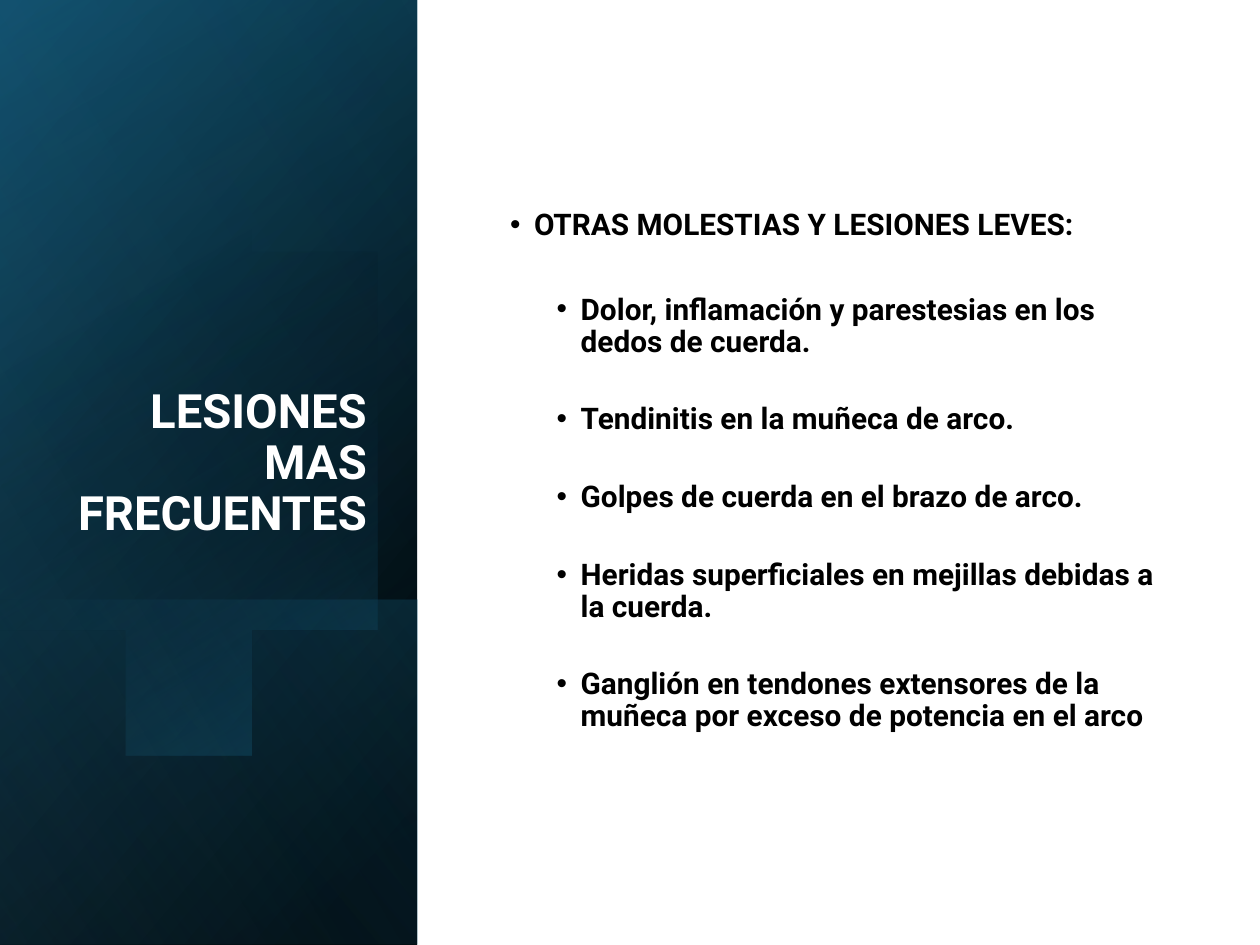
from typing import NamedTuple

from lxml.etree import SubElement
from pptx import Presentation
from pptx.dml.color import RGBColor
from pptx.enum.shapes import MSO_SHAPE
from pptx.enum.text import MSO_ANCHOR, PP_ALIGN
from pptx.oxml.ns import qn
from pptx.util import Inches, Pt

BLACK = RGBColor(0x00, 0x00, 0x00)
WHITE = RGBColor(0xFF, 0xFF, 0xFF)
NAVY = RGBColor(0x10, 0x48, 0x62)
TEAL = RGBColor(0x15, 0x60, 0x82)
SKY = RGBColor(0x46, 0xB1, 0xE1)

PANEL_W, SLIDE_H = 3.31, 7.5
BAND_H = 2.74


class Stop(NamedTuple):
    pos: int
    color: RGBColor
    opacity: int = 100


class Layer(NamedTuple):
    top: float
    angle: int
    stops: tuple[Stop, Stop]


class Item(NamedTuple):
    text: str
    indent: float
    before: float


BACK_LAYERS = [
    Layer(0, 220, (Stop(8, BLACK), Stop(100, NAVY))),
    Layer(0, 240, (Stop(0, BLACK, 0), Stop(99, TEAL, 46))),
    Layer(SLIDE_H - BAND_H, 140, (Stop(2, TEAL, 29), Stop(100, BLACK, 30))),
]
GLOW = Layer(0, 150, (Stop(0, BLACK, 0), Stop(99, SKY, 11)))
DISC_ANGLE = 60
DISC_STOPS = (Stop(29, BLACK, 0), Stop(100, TEAL, 43))

# Cubic curves around the disc, clockwise from the left slide edge
DISC_CURVES = [
    ((0, 1.42), (0.13, 1.31), (0.28, 1.23), (0.45, 1.18)),
    ((0.45, 1.18), (0.62, 1.13), (0.79, 1.12), (0.96, 1.14)),
    ((0.96, 1.14), (1.71, 1.22), (2.44, 1.92), (2.73, 2.9)),
    ((2.73, 2.9), (3.07, 4.12), (2.62, 5.31), (1.71, 5.57)),
    ((1.71, 5.57), (1.14, 5.74), (0.53, 5.5), (0.07, 5)),
]
DISC_END = (0, 4.92)

ITEMS = [Item("OTRAS MOLESTIAS Y LESIONES LEVES:", 0.19, 0)] + [
    Item(text, 0.56, 29.7 if i == 0 else 26)
    for i, text in enumerate([
        "Dolor, inflamación y parestesias en los dedos de cuerda.",
        "Tendinitis en la muñeca de arco.",
        "Golpes de cuerda en el brazo de arco.",
        "Heridas superficiales en mejillas debidas a la cuerda.",
        "Ganglión en tendones extensores de la muñeca por exceso de potencia en el arco",
    ])
]


def fill_gradient(sp, angle: int, stops: tuple[Stop, Stop]) -> None:
    """Fill with a linear gradient; the angle runs clockwise from rightwards."""
    sp.shadow.inherit = False
    sp.line.fill.background()
    sp.fill.gradient()
    grad = sp.fill._xPr.find(qn("a:gradFill"))
    for child in list(grad):
        grad.remove(child)
    gs_list = SubElement(grad, qn("a:gsLst"))
    for stop in stops:
        gs = SubElement(gs_list, qn("a:gs"), pos=str(stop.pos * 1000))
        color = SubElement(gs, qn("a:srgbClr"), val=str(stop.color))
        if stop.opacity < 100:
            SubElement(color, qn("a:alpha"), val=str(stop.opacity * 1000))
    SubElement(grad, qn("a:lin"), ang=str(angle * 60000), scaled="0")


def add_layer(s, layer: Layer) -> None:
    sp = s.shapes.add_shape(
        MSO_SHAPE.RECTANGLE, 0, Inches(layer.top),
        Inches(PANEL_W), Inches(SLIDE_H - layer.top))
    fill_gradient(sp, layer.angle, layer.stops)


def curve_points(curve, steps: int = 24) -> list[tuple[float, float]]:
    """Sample a cubic Bezier curve, leaving out its start."""
    points = []
    for i in range(1, steps + 1):
        t = i / steps
        weights = ((1 - t) ** 3, 3 * t * (1 - t) ** 2, 3 * t * t * (1 - t), t ** 3)
        points.append(tuple(
            sum(w * p[axis] for w, p in zip(weights, curve)) for axis in (0, 1)))
    return points


def add_disc(s) -> None:
    points = [p for curve in DISC_CURVES for p in curve_points(curve)] + [DISC_END]
    builder = s.shapes.build_freeform(*DISC_CURVES[0][0], scale=Inches(1))
    builder.add_line_segments(points, close=True)
    fill_gradient(builder.convert_to_shape(), DISC_ANGLE, DISC_STOPS)


def add_text_frame(s, box: tuple[float, ...], anchor):
    tf = s.shapes.add_textbox(*map(Inches, box)).text_frame
    tf.word_wrap = True
    tf.vertical_anchor = anchor
    return tf


def write(p, text: str, size: int, color: RGBColor) -> None:
    p.line_spacing = 0.9
    r = p.add_run()
    r.text = text
    for name, value in {"name": "Roboto", "size": Pt(size), "bold": True}.items():
        setattr(r.font, name, value)
    r.font.color.rgb = color


def add_title(s) -> None:
    tf = add_text_frame(s, (0.38, 0.64, 2.63, 3.7), MSO_ANCHOR.BOTTOM)
    p = tf.paragraphs[0]
    p.alignment = PP_ALIGN.RIGHT
    write(p, "LESIONES MAS FRECUENTES", 27, WHITE)


def add_items(s) -> None:
    tf = add_text_frame(s, (3.95, 0.71, 5.38, 6.07), MSO_ANCHOR.MIDDLE)
    for i, item in enumerate(ITEMS):
        p = tf.add_paragraph() if i else tf.paragraphs[0]
        pPr = p._p.get_or_add_pPr()
        pPr.set("marL", str(Inches(item.indent)))
        pPr.set("indent", str(-Inches(0.19)))
        SubElement(pPr, qn("a:buFont"), typeface="Arial")
        SubElement(pPr, qn("a:buChar"), char="•")
        if item.before:
            p.space_before = Pt(item.before)
        write(p, item.text, 17, BLACK)


def main() -> None:
    prs = Presentation()
    prs.slide_width, prs.slide_height = Inches(10), Inches(SLIDE_H)
    s = prs.slides.add_slide(prs.slide_layouts[6])
    s.background.fill.solid()
    s.background.fill.fore_color.rgb = WHITE
    for layer in BACK_LAYERS:
        add_layer(s, layer)
    add_disc(s)
    add_layer(s, GLOW)
    add_title(s)
    add_items(s)
    prs.save("out.pptx")


if __name__ == "__main__":
    main()
